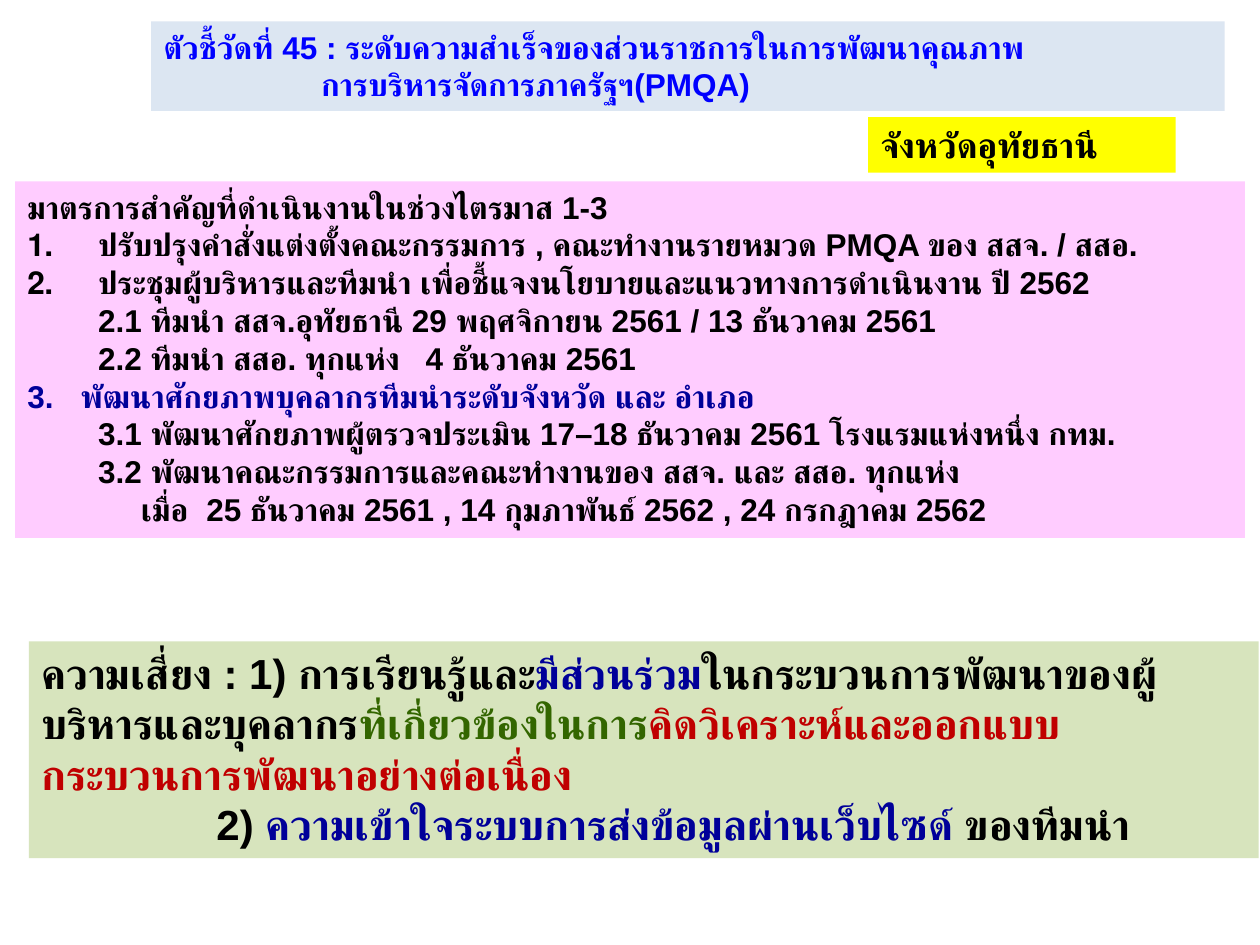
from dataclasses import dataclass

from lxml import etree
from pptx import Presentation
from pptx import util as u
from pptx.dml.color import RGBColor
from pptx.enum import text
from pptx.oxml.ns import qn

COLUMNS, ROWS = 100, 75
CELL = u.Inches(0.1)


@dataclass(frozen=True)
class Theme:
    font: str = "Arial"
    thai_font: str = "Calibri"
    body: int = 18
    label: int = 20
    risk: int = 24
    black: str = "000000"
    navy: str = "000099"
    blue: str = "0000FF"
    green: str = "336600"
    red: str = "C00000"
    pink_fill: str = "FFCCFF"
    yellow_fill: str = "FFFF00"
    green_fill: str = "D7E4BD"
    blue_fill: str = "DCE6F2"


THEME = Theme()


@dataclass(frozen=True)
class Span:
    words: str
    color: str = THEME.black
    font: str = THEME.font


@dataclass(frozen=True)
class Line:
    """A paragraph; margin and hang are grid columns."""
    spans: tuple[Span, ...]
    margin: float = 0
    hang: float = 0
    numbered: bool = False


@dataclass(frozen=True)
class Panel:
    """A filled text panel placed in grid columns and rows."""
    column: float
    row: float
    columns: float
    rows: float
    fill: str
    size: int
    lines: tuple[Line, ...]


def line(words: str, margin: float = 0, hang: float = 0,
         color: str = THEME.black, numbered: bool = False) -> Line:
    return Line((Span(words, color),), margin, hang, numbered)


SUB_ITEM = 5.6

PANELS = (
    Panel(1.2, 14.4, 97.6, 28.3, THEME.pink_fill, THEME.body, (
        line("มาตรการสำคัญที่ดำเนินงานในช่วงไตรมาส 1-3"),
        line("ปรับปรุงคำสั่งแต่งตั้งคณะกรรมการ , คณะทำงานรายหมวด PMQA ของ สสจ. / สสอ.",
             SUB_ITEM, SUB_ITEM, numbered=True),
        line("ประชุมผู้บริหารและทีมนำ เพื่อชี้แจงนโยบายและแนวทางการดำเนินงาน ปี 2562",
             SUB_ITEM, SUB_ITEM, numbered=True),
        line("2.1 ทีมนำ สสจ.อุทัยธานี 29 พฤศจิกายน 2561 / 13 ธันวาคม 2561", SUB_ITEM),
        line("2.2 ทีมนำ สสอ. ทุกแห่ง\t4 ธันวาคม 2561", 31.6, 31.6 - SUB_ITEM),
        line("3.\tพัฒนาศักยภาพบุคลากรทีมนำระดับจังหวัด และ อำเภอ", 4.2, 4.2, THEME.navy),
        line("3.1 พัฒนาศักยภาพผู้ตรวจประเมิน 17–18 ธันวาคม 2561 โรงแรมแห่งหนึ่ง กทม.", SUB_ITEM),
        line("3.2 พัฒนาคณะกรรมการและคณะทำงานของ สสจ. และ สสอ. ทุกแห่ง", SUB_ITEM),
        line("เมื่อ\t25 ธันวาคม 2561 , 14 กุมภาพันธ์ 2562 , 24 กรกฎาคม 2562", 14.2, 5.2),
    )),
    Panel(68.9, 9.3, 24.4, 4.4, THEME.yellow_fill, THEME.label, (
        line("จังหวัดอุทัยธานี"),
    )),
    Panel(2.3, 50.9, 97.6, 17.2, THEME.green_fill, THEME.risk, (
        Line((
            Span("ความเสี่ยง : 1) การเรียนรู้และ"),
            Span("มีส่วนร่วม", THEME.navy),
            Span("ในกระบวนการพัฒนาของผู้บริหารและบุคลากร"),
            Span("ที่เกี่ยวข้องในการ", THEME.green),
            Span("คิดวิเคราะห์และออกแบบกระบวนการพัฒนาอย่างต่อเนื่อง", THEME.red),
        )),
        Line((
            Span("2) "),
            Span("ความเข้าใจระบบการส่งข้อมูลผ่านเว็บไซด์ ", THEME.navy),
            Span("ของทีมนำ"),
        ), margin=13.9),
    )),
    Panel(12, 1.7, 85.2, 7.1, THEME.blue_fill, THEME.body, (
        Line((
            Span("ตัวชี้วัดที่ 45 : ระดับความสำเร็จของ", THEME.blue),
            Span("ส่วนราชการใน", THEME.blue, THEME.thai_font),
            Span("การพัฒนาคุณภาพ", THEME.blue),
        )),
        line("การบริหารจัดการภาครัฐฯ(PMQA)", 12.5, color=THEME.blue),
    )),
)


def cells(count: float) -> int:
    return round(count * CELL)


def write_line(para, content: Line, size: int) -> None:
    properties = para._p.get_or_add_pPr()
    properties.set("marL", str(cells(content.margin)))
    properties.set("indent", str(-cells(content.hang)))
    if content.numbered:
        etree.SubElement(properties, qn("a:buFont"), typeface="+mj-lt")
        etree.SubElement(properties, qn("a:buAutoNum"), type="arabicPeriod")
    for part in content.spans:
        span = para.add_run()
        span.text = part.words
        span.font.name = part.font
        span.font.size = u.Pt(size)
        span.font.bold = True
        span.font.color.rgb = RGBColor.from_string(part.color)


def draw_panel(page, panel: Panel) -> None:
    box = page.shapes.add_textbox(cells(panel.column), cells(panel.row),
                                  cells(panel.columns), cells(panel.rows))
    box.fill.solid()
    box.fill.fore_color.rgb = RGBColor.from_string(panel.fill)
    frame = box.text_frame
    frame.word_wrap = True
    frame.auto_size = text.MSO_AUTO_SIZE.SHAPE_TO_FIT_TEXT
    for index, content in enumerate(panel.lines):
        para = frame.add_paragraph() if index else frame.paragraphs[0]
        write_line(para, content, panel.size)


def main() -> None:
    deck = Presentation()
    deck.slide_width, deck.slide_height = cells(COLUMNS), cells(ROWS)
    page = deck.slides.add_slide(deck.slide_layouts[6])
    for panel in PANELS:
        draw_panel(page, panel)
    deck.save("out.pptx")


if __name__ == "__main__":
    main()
